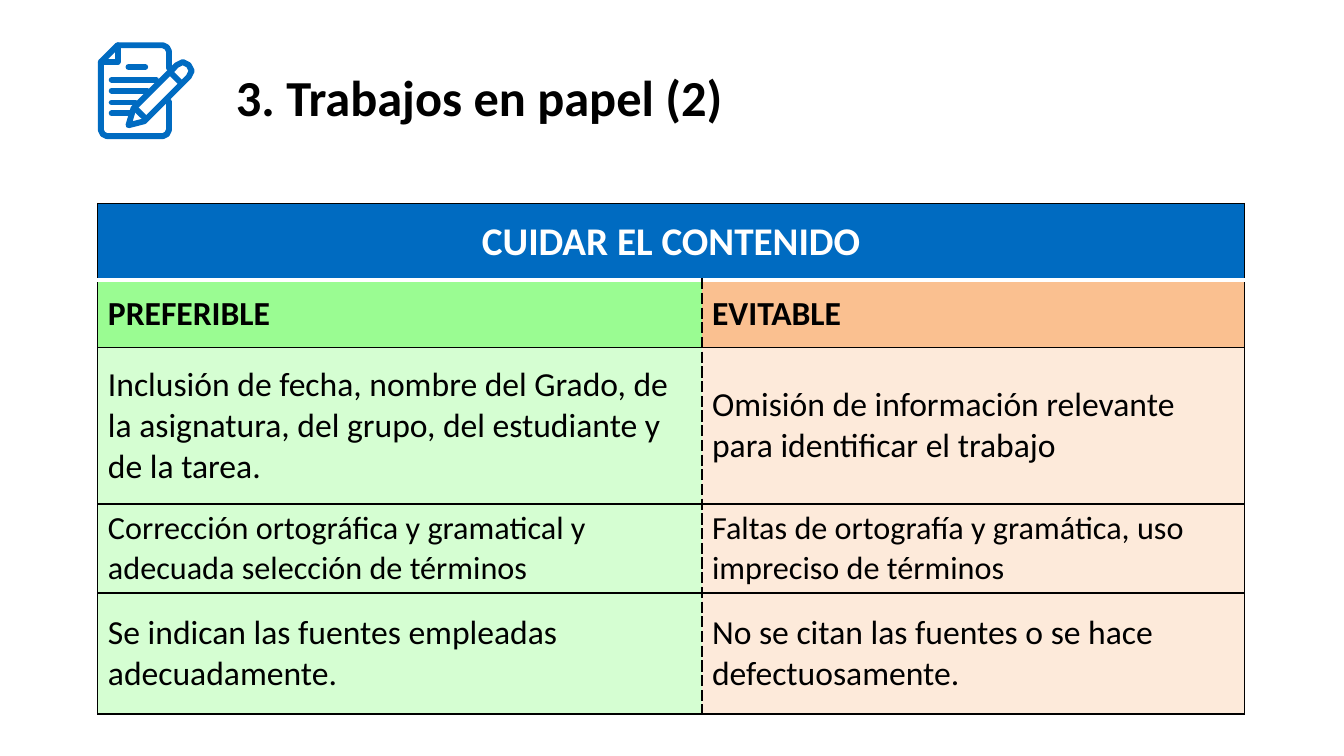
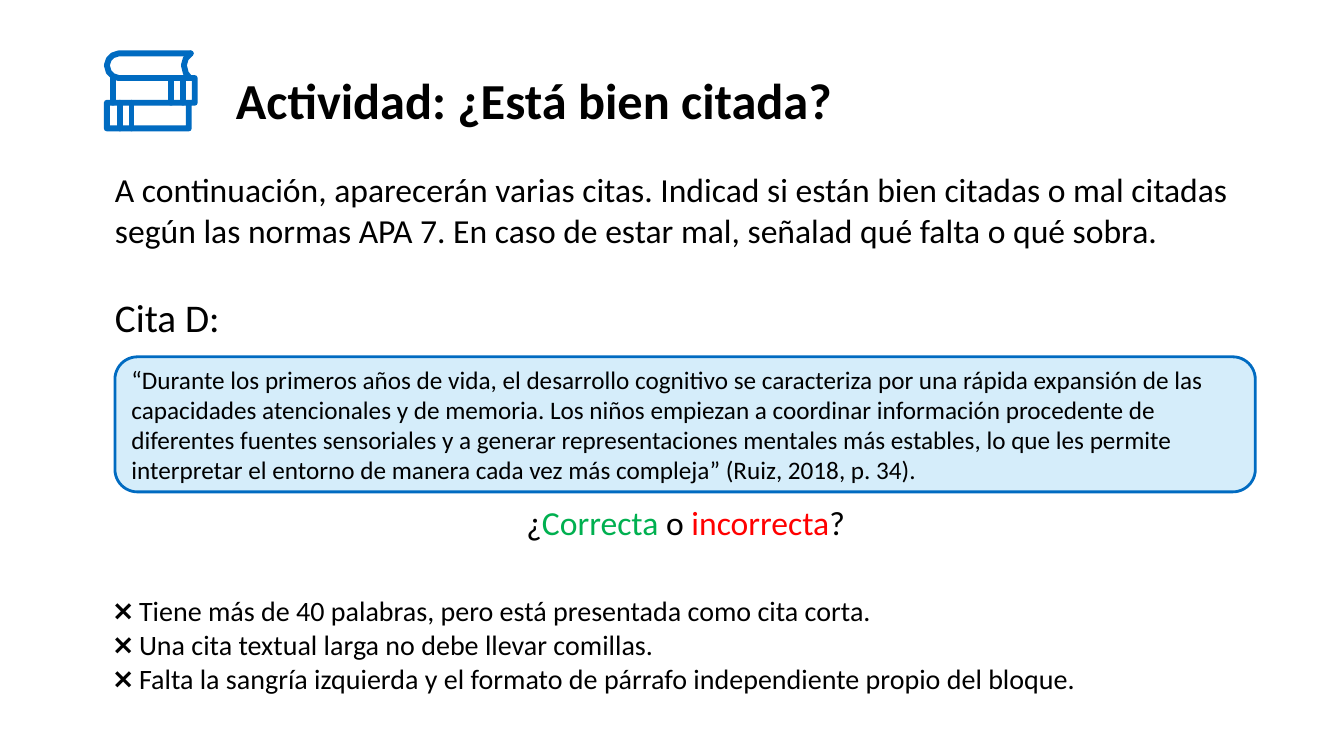
from dataclasses import dataclass

from lxml import etree
from pptx import Presentation
from pptx.dml.color import RGBColor
from pptx.enum.shapes import MSO_SHAPE
from pptx.enum.text import MSO_ANCHOR, MSO_AUTO_SIZE, PP_ALIGN
from pptx.oxml.ns import qn
from pptx.util import Inches, Pt

LEFT, MID = PP_ALIGN.LEFT, PP_ALIGN.CENTER
TOP, CENTER = MSO_ANCHOR.TOP, MSO_ANCHOR.MIDDLE
FIXED = MSO_AUTO_SIZE.NONE
ROUND = MSO_SHAPE.ROUNDED_RECTANGLE
WIDE, HIGH = Inches(13.33), Inches(7.5)


@dataclass(frozen=True)
class Theme:
    font: str = "Calibri"
    blue: str = "006BC1"
    pale: str = "D5EDFA"
    black: str = "000000"
    white: str = "FFFFFF"
    green: str = "00B050"
    red: str = "FF0000"
    heads: tuple = ("9AFC92", "FAC090")
    fills: tuple = ("D5FED2", "FDEADA")
    title: int = 36
    large: int = 28
    body: int = 24
    snug: int = 23
    list: int = 20
    quote: int = 18


T = Theme()

# Icon strokes on a grid whose unit is 1/100 of the icon width
PAPER = [
    [(72, 26), (72, 9), (70, 5), (66, 3), (20, 3), (3, 20), (3, 89),
     (5, 93), (9, 95), (66, 95), (70, 93), (72, 89), (72, 60)],
    [(20, 3), (20, 20), (3, 20)],
    [(31, 25), (48, 25)],
    *[[(14, y), (x, y)] for y, x in ((38, 59), (49, 50), (61, 38), (72, 32))],
    [(51, 76), (47, 80), (31, 84), (36, 67), (80, 23), (86, 20), (92, 23),
     (95, 29), (92, 35), (51, 76)],
    [(75, 32), (83, 40)],
    [(39, 68), (47, 76)],
]
BOOKS = [
    [(90, 3), (17, 3), (11, 5), (7, 9), (5, 15), (7, 22), (11, 26), (17, 28),
     (94, 28), (94, 53), (5, 53), (5, 79), (88, 79), (88, 53)],
    [(90, 3), (85, 8), (83, 15), (85, 23), (89, 28)],
    [(11, 28), (11, 53)],
    *[[(x, 28), (x, 53)] for x in (70, 82)],
    *[[(x, 53), (x, 79)] for x in (18, 30)],
]


def box(x, y, w, h):
    """Turn percentages of the slide into lengths."""
    return (int(WIDE * x / 100), int(HIGH * y / 100),
            int(WIDE * w / 100), int(HIGH * h / 100))


def rgb(code):
    return RGBColor.from_string(code)


def style(run, size, color=T.black, bold=False):
    font = run.font
    font.name, font.size, font.bold = T.font, Pt(size), bold
    font.color.rgb = rgb(color)


def write(para, text, size, color=T.black, bold=False, align=LEFT, gap=0):
    para.text = text
    para.alignment = align
    para.space_before = Pt(gap)
    for run in para.runs:
        style(run, size, color, bold)


def setup(frame, anchor):
    frame.word_wrap = True
    frame.auto_size = FIXED
    frame.vertical_anchor = anchor
    frame.margin_left = frame.margin_right = Inches(0.13)
    frame.margin_top = frame.margin_bottom = Inches(0.07)


def text_box(slide, area):
    frame = slide.shapes.add_textbox(*area).text_frame
    setup(frame, TOP)
    return frame


# Heading: title placeholder and outline icon
def head(slide, text, area):
    title = slide.shapes.title
    title.left, title.top, title.width, title.height = area
    setup(title.text_frame, CENTER)
    write(title.text_frame.paragraphs[0], text, T.title, bold=True)


def icon(slide, strokes, area):
    left, top, width, _ = area
    first = strokes[0]
    pen = slide.shapes.build_freeform(*first[0], scale=width / 100)
    pen.add_line_segments(first[1:], close=False)
    for stroke in strokes[1:]:
        pen.move_to(*stroke[0])
        pen.add_line_segments(stroke[1:], close=False)
    shape = pen.convert_to_shape(left, top)
    shape.shadow.inherit = False
    shape.fill.background()
    shape.line.color.rgb = rgb(T.blue)
    shape.line.width = Pt(4.2)
    line = shape.line._get_or_add_ln()
    line.set("cap", "rnd")
    etree.SubElement(line, qn("a:round"))


# Comparison table
def edge(cell, side, color=T.black, width=1, dash="solid"):
    line = etree.SubElement(cell._tc.get_or_add_tcPr(), qn("a:ln" + side))
    line.set("w", str(Pt(width)))
    fill = etree.SubElement(line, qn("a:solidFill"))
    etree.SubElement(fill, qn("a:srgbClr")).set("val", color)
    etree.SubElement(line, qn("a:prstDash")).set("val", dash)


def paint(cell, fill, sides):
    for side in "LRTB":
        edge(cell, side, **sides.get(side, {}))
    cell.fill.solid()
    cell.fill.fore_color.rgb = rgb(fill)
    cell.vertical_anchor = CENTER


def compare(slide, area, banner, names, rows):
    table = slide.shapes.add_table(len(rows) + 2, 2, *area).table
    for col, share in zip(table.columns, (52.7, 47.3)):
        col.width = int(area[2] * share / 100)
    for row, share in zip(table.rows, (15, 13.3, 30.6, 17.4, 23.7)):
        row.height = int(area[3] * share / 100)

    # Banner across both columns
    rule = {"color": T.white, "width": 3}
    top = table.cell(0, 0)
    top.merge(table.cell(0, 1))
    for col in range(2):
        paint(table.cell(0, col), T.blue, {"B": rule})
    write(top.text_frame.paragraphs[0], banner, T.large, T.white, True, MID)

    # Column names and their pairs of entries
    lines = [(T.body, names), *rows]
    for num, (size, pair) in enumerate(lines, 1):
        first = num == 1
        for col, text in enumerate(pair):
            cell = table.cell(num, col)
            sides = {"LR"[1 - col]: {"dash": "dash"}}
            if first:
                sides["T"] = rule
            paint(cell, (T.heads if first else T.fills)[col], sides)
            write(cell.text_frame.paragraphs[0], text, size, bold=first)


# Activity parts
def task(slide, area, intro, label, parts):
    frame = text_box(slide, area)
    write(frame.paragraphs[0], intro, T.body)
    write(frame.add_paragraph(), label, T.large, gap=31)
    ask = frame.add_paragraph()
    ask.alignment, ask.space_before = MID, Pt(115)
    for text, color in parts:
        run = ask.add_run()
        run.text = text
        style(run, T.body, color)


def quote(slide, area, text):
    shape = slide.shapes.add_shape(ROUND, *area)
    shape.shadow.inherit = False
    shape.fill.solid()
    shape.fill.fore_color.rgb = rgb(T.pale)
    shape.line.color.rgb = rgb(T.blue)
    shape.line.width = Pt(2)
    frame = shape.text_frame
    frame.word_wrap = True
    frame.vertical_anchor = CENTER
    write(frame.paragraphs[0], text, T.quote)


def faults(slide, area, items):
    frame = text_box(slide, area)
    for num, item in enumerate(items):
        para = frame.add_paragraph() if num else frame.paragraphs[0]
        write(para, "❌ " + item, T.list, gap=0.2)


# Slides
def paper(slide):
    icon(slide, PAPER, box(7.28, 5.6, 7.35, 13.07))
    head(slide, "3. Trabajos en papel (2)", box(16.58, 5.6, 41.63, 14.27))
    compare(slide, box(7.28, 26.93, 85.3, 67.47), "CUIDAR EL CONTENIDO",
            ("PREFERIBLE", "EVITABLE"), [
        (T.body, ("Inclusión de fecha, nombre del Grado, de la asignatura, "
                  "del grupo, del estudiante y de la tarea.",
                  "Omisión de información relevante para identificar el "
                  "trabajo")),
        (T.snug, ("Corrección ortográfica y gramatical y adecuada selección "
                  "de términos",
                  "Faltas de ortografía y gramática, uso impreciso de "
                  "términos")),
        (T.body, ("Se indican las fuentes empleadas adecuadamente.",
                  "No se citan las fuentes o se hace defectuosamente.")),
    ])


def cite(slide):
    head(slide, "Actividad: ¿Está bien citada?", box(16.58, 6.4, 48.46, 13.47))
    task(slide, box(7.58, 21.47, 86.87, 53.87),
         "A continuación, aparecerán varias citas. Indicad si están bien "
         "citadas o mal citadas según las normas APA 7. En caso de estar "
         "mal, señalad qué falta o qué sobra.", "Cita D:",
         [("¿", T.black), ("Correcta ", T.green), ("o ", T.black),
          ("incorrecta", T.red), ("?", T.black)])
    icon(slide, BOOKS, box(7.58, 6.67, 7.35, 10.93))
    quote(slide, box(8.55, 47.2, 84.85, 17.87),
          "“Durante los primeros años de vida, el desarrollo cognitivo se "
          "caracteriza por una rápida expansión de las capacidades "
          "atencionales y de memoria. Los niños empiezan a coordinar "
          "información procedente de diferentes fuentes sensoriales y a "
          "generar representaciones mentales más estables, lo que les "
          "permite interpretar el entorno de manera cada vez más compleja” "
          "(Ruiz, 2018, p. 34).")
    faults(slide, box(7.5, 77.6, 86.87, 18.93), [
        "Tiene más de 40 palabras, pero está presentada como cita corta.",
        "Una cita textual larga no debe llevar comillas.",
        "Falta la sangría izquierda y el formato de párrafo independiente "
        "propio del bloque.",
    ])


def main():
    deck = Presentation()
    deck.slide_width, deck.slide_height = WIDE, HIGH
    for fill in (paper, cite):
        fill(deck.slides.add_slide(deck.slide_layouts[5]))
    deck.save("out.pptx")


if __name__ == "__main__":
    main()
